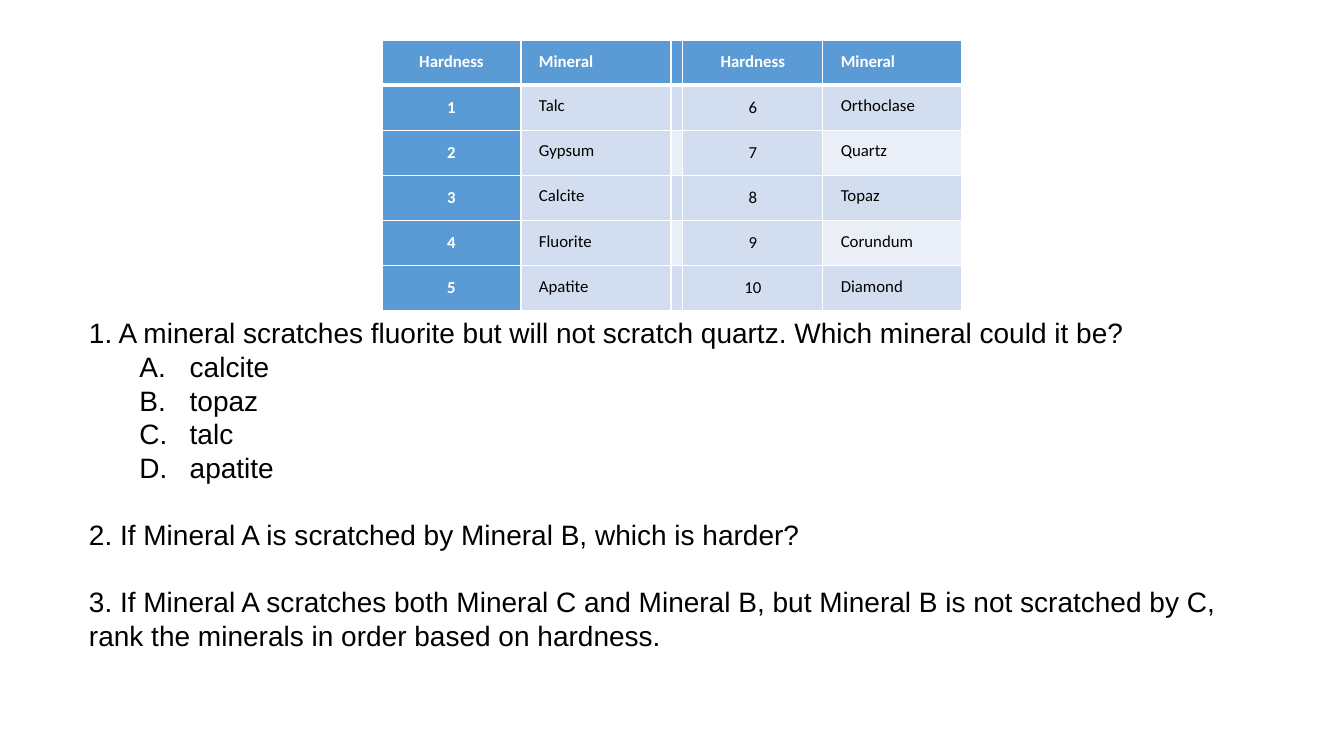
from dataclasses import dataclass

from lxml.etree import SubElement
from pptx import Presentation
from pptx.dml.color import RGBColor as RGB
from pptx.enum.text import MSO_ANCHOR as Anchor, PP_ALIGN as Align
from pptx.oxml.ns import qn
from pptx.util import Pt

EMU_PER_PX = 914400 / 100.8


@dataclass(frozen=True)
class Theme:
    header: str = "5B9BD5"
    band_dark: str = "D2DEEF"
    band_light: str = "EAEFF7"
    white: str = "FFFFFF"
    black: str = "000000"
    table_font: str = "Calibri"
    body_font: str = "Arial"
    table_size: int = 12
    body_size: int = 20
    question_gap: int = 24


THEME = Theme()

COLUMN_WIDTHS = [139, 150, 11, 140, 139]
MINERALS = ["Talc", "Gypsum", "Calcite", "Fluorite", "Apatite",
            "Orthoclase", "Quartz", "Topaz", "Corundum", "Diamond"]
QUESTIONS = [
    ("1. A mineral scratches fluorite but will not scratch quartz. Which mineral could it be?",
     ["calcite", "topaz", "talc", "apatite"]),
    ("2. If Mineral A is scratched by Mineral B, which is harder?", []),
    ("3. If Mineral A scratches both Mineral C and Mineral B, but Mineral B is not "
     "scratched by C, rank the minerals in order based on hardness.", []),
]


def px(length):
    return round(length * EMU_PER_PX)


def set_font(paragraph, name, size, color, bold=False):
    font = paragraph.font
    font.name, font.size, font.bold = name, Pt(size), bold
    font.color.rgb = RGB.from_string(color)


def add_borders(cell, widths):
    properties = cell._tc.get_or_add_tcPr()
    for side, width in widths.items():
        border = SubElement(properties, qn(f"a:ln{side}"), w=str(Pt(width)))
        fill = SubElement(border, qn("a:solidFill"))
        SubElement(fill, qn("a:srgbClr"), val=THEME.white)


def cell_fill(row, column):
    if row == 0 or column == 0:
        return THEME.header
    if column in (2, 4) and row % 2 == 0:
        return THEME.band_light
    return THEME.band_dark


def style_cell(cell, row, column, text):
    is_header = row == 0
    is_mineral = column in (1, 4)
    emphasized = is_header or column == 0
    add_borders(cell, {"L": 1, "R": 1, "T": 1, "B": 3} if is_header else {"L": 1, "R": 1, "B": 1})
    cell.fill.solid()
    cell.fill.fore_color.rgb = RGB.from_string(cell_fill(row, column))
    cell.margin_left = cell.margin_right = cell.margin_top = cell.margin_bottom = px(4)
    cell.vertical_anchor = Anchor.MIDDLE
    cell.text = text
    paragraph = cell.text_frame.paragraphs[0]
    paragraph.line_spacing = Pt(12 if is_mineral and not is_header else 14)
    if is_mineral:
        paragraph._p.get_or_add_pPr().set("marL", str(px(14)))
    else:
        paragraph.alignment = Align.CENTER
    set_font(paragraph, THEME.table_font, THEME.table_size,
             THEME.white if emphasized else THEME.black, emphasized)


def add_hardness_table(slide, left, top, width, height):
    half = len(MINERALS) // 2
    rows = [["Hardness", "Mineral", "", "Hardness", "Mineral"]]
    for rank in range(1, half + 1):
        rows.append([str(rank), MINERALS[rank - 1], "",
                     str(rank + half), MINERALS[rank + half - 1]])
    table = slide.shapes.add_table(len(rows), len(COLUMN_WIDTHS),
                                   px(left), px(top), px(width), px(height)).table
    for column, column_width in zip(table.columns, COLUMN_WIDTHS):
        column.width = px(column_width)
    for row_index, texts in enumerate(rows):
        table.rows[row_index].height = px(height / len(rows))
        for column_index, text in enumerate(texts):
            style_cell(table.cell(row_index, column_index), row_index, column_index, text)


def add_questions(slide, left, top, width, height):
    frame = slide.shapes.add_textbox(px(left), px(top), px(width), px(height)).text_frame
    frame.word_wrap = True
    frame.vertical_anchor = Anchor.TOP
    for number, (question, choices) in enumerate(QUESTIONS):
        lines = [question] + [f"\t{letter}.\t{choice}" for letter, choice in zip("ABCD", choices)]
        for position, line in enumerate(lines):
            first = number == position == 0
            paragraph = frame.paragraphs[0] if first else frame.add_paragraph()
            paragraph.text = line
            set_font(paragraph, THEME.body_font, THEME.body_size, THEME.black)
            if number and position == 0:
                paragraph.space_before = Pt(THEME.question_gap)


def main():
    deck = Presentation()
    deck.slide_width, deck.slide_height = px(1344), px(756)
    slide = deck.slides.add_slide(deck.slide_layouts[6])
    add_hardness_table(slide, 382, 40, sum(COLUMN_WIDTHS), 271)
    add_questions(slide, 79, 311, 1186, 380)
    deck.save("out.pptx")


if __name__ == "__main__":
    main()
